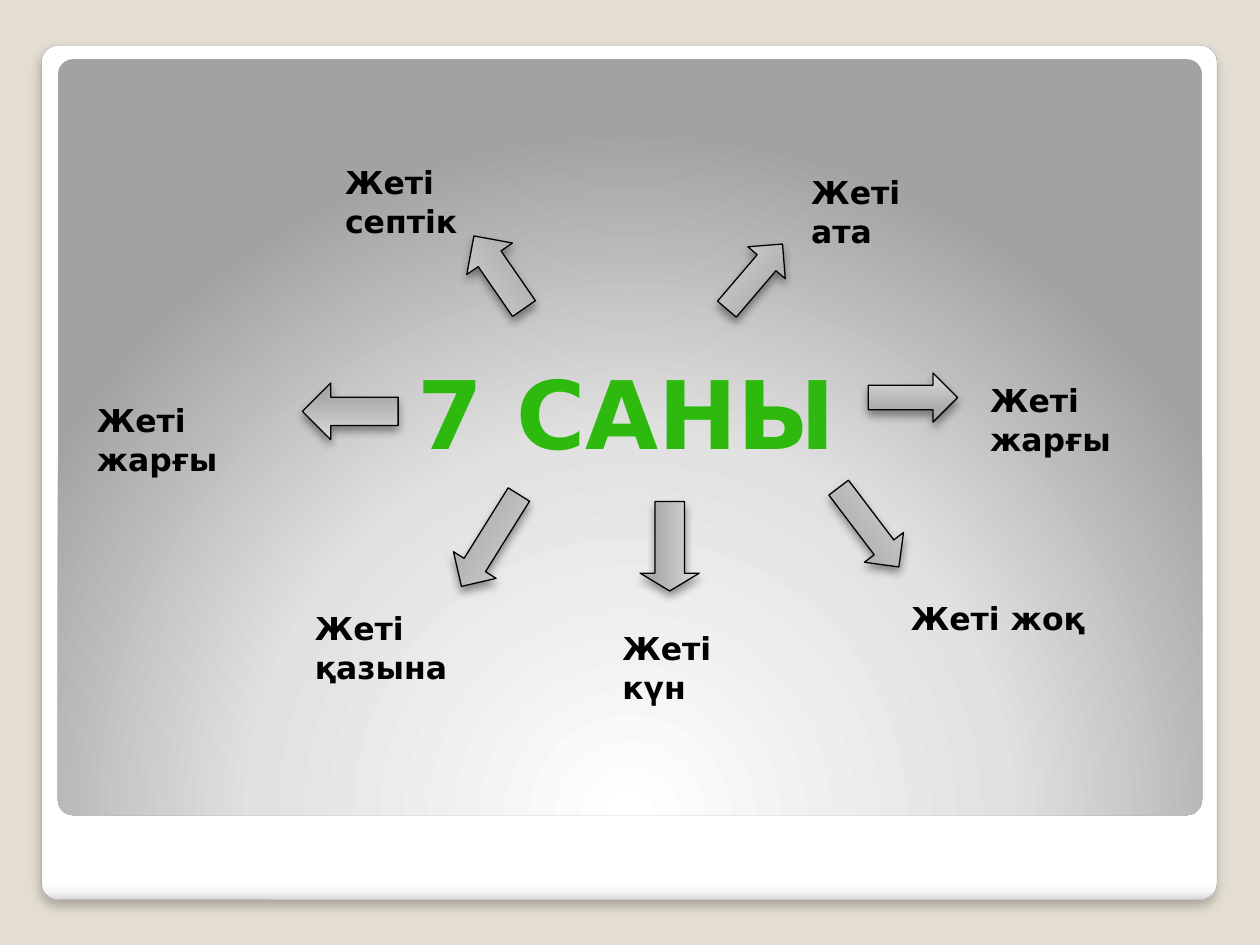
from typing import NamedTuple

from lxml.etree import SubElement
from pptx import Presentation
from pptx.dml.color import RGBColor
from pptx.enum.shapes import MSO_SHAPE
from pptx.enum.text import MSO_ANCHOR, PP_ALIGN
from pptx.oxml import parse_xml
from pptx.oxml.ns import nsdecls, qn
from pptx.util import Inches, Pt

BEIGE = RGBColor(0xE3, 0xDE, 0xD1)
WHITE = RGBColor(0xFF, 0xFF, 0xFF)
MIST = RGBColor(0xF7, 0xF7, 0xF7)
PALE = RGBColor(0xE1, 0xE1, 0xE1)
LIGHT = RGBColor(0xDC, 0xDC, 0xDC)
EDGE = RGBColor(0xDA, 0xDA, 0xDA)
MID = RGBColor(0xAB, 0xAB, 0xAB)
BORDER = RGBColor(0xA4, 0xA4, 0xA4)
GREY = RGBColor(0xA2, 0xA2, 0xA2)
BLACK = RGBColor(0, 0, 0)
GREEN = RGBColor(0x2D, 0xB9, 0x0E)
FONT = "DejaVu Sans"


class Box(NamedTuple):
    x: float
    y: float
    w: float
    h: float


class Arrow(NamedTuple):
    box: Box
    angle: float
    head: float = 0.5


class Label(NamedTuple):
    text: str
    x: float
    y: float
    w: float


class Shadow(NamedTuple):
    alpha: int
    blur: float
    dist: float


FRAME = Box(3.3, 4.8, 93.3, 90.4)
PANEL = Box(4.6, 6.27, 90.8, 80)
TITLE = Box(31.9, 36.4, 35.7, 13.47)
LABEL_H = 5.33

FRAME_STOPS = [(0, WHITE), (98, WHITE), (99, MIST), (100, EDGE)]
PANEL_STOPS = [(0, WHITE), (55, PALE), (100, GREY)]
ARROW_STOPS = [(0, GREY), (25, MID), (100, LIGHT)]
PANEL_PATH = ('<a:path path="circle"><a:fillToRect l="50000" t="175000" '
              'r="50000" b="-75000"/></a:path>')

ARROWS = [
    Arrow(Box(68.9, 39.47, 7.1, 5.2), 0),
    Arrow(Box(24, 40.53, 7.6, 6), 180),
    Arrow(Box(36.1, 25.87, 7, 5.87), 235.4),
    Arrow(Box(56.5, 26.67, 6.8, 5.2), 310.5),
    Arrow(Box(65, 53.2, 7.9, 5.2), 52.8),
    Arrow(Box(34.6, 54.53, 8.6, 5.33), 122),
    Arrow(Box(49.6, 54.67, 7.1, 6.27), 90, 0.3),
]
LABELS = [
    Label("Жеті жарғы", 77.6, 39.47, 19.3),
    Label("Жеті жоқ", 71.3, 62.53, 16.2),
    Label("Жеті күн", 48.4, 65.73, 14.8),
    Label("Жеті қазына", 24, 63.6, 20.3),
    Label("Жеті жарғы", 6.7, 41.6, 19.3),
    Label("Жеті септік", 26.4, 16.4, 18.5),
    Label("Жеті ата", 63.4, 17.47, 14.3),
]

prs = Presentation()
prs.slide_width, prs.slide_height = Inches(10), Inches(7.5)
slide = prs.slides.add_slide(prs.slide_layouts[5])


def place(box: Box) -> tuple[int, int, int, int]:
    w, h = prs.slide_width / 100, prs.slide_height / 100
    return int(box.x * w), int(box.y * h), int(box.w * w), int(box.h * h)


def linear(angle: int) -> str:
    return f'<a:lin ang="{angle * 60000}" scaled="0"/>'


def add_gradient_shape(kind, box: Box, stops, direction: str, line=None,
                       line_width: float = 0.75, shadow: Shadow | None = None):
    sp = slide.shapes.add_shape(kind, *place(box))
    gs = "".join(f'<a:gs pos="{pos * 1000}"><a:srgbClr val="{color}"/></a:gs>'
                 for pos, color in stops)
    props = sp.element.spPr
    props.find(qn("a:prstGeom")).addnext(parse_xml(
        f'<a:gradFill {nsdecls("a")} rotWithShape="1">'
        f'<a:gsLst>{gs}</a:gsLst>{direction}</a:gradFill>'))
    if line is None:
        sp.line.fill.background()
    else:
        sp.line.color.rgb = line
        sp.line.width = Pt(line_width)
    sp.shadow.inherit = False
    if shadow:
        outer = SubElement(props.find(qn("a:effectLst")), qn("a:outerShdw"),
                           blurRad=str(Pt(shadow.blur)), dist=str(Pt(shadow.dist)),
                           dir="5400000", algn="t", rotWithShape="0")
        color = SubElement(outer, qn("a:srgbClr"), val=str(BLACK))
        SubElement(color, qn("a:alpha"), val=str(shadow.alpha * 1000))
    return sp


def write(sp, text: str, *, size: float, color: RGBColor,
          align=PP_ALIGN.LEFT, wrap: bool = True) -> None:
    tf = sp.text_frame
    tf.word_wrap = wrap
    tf.vertical_anchor = MSO_ANCHOR.TOP
    p = tf.paragraphs[0]
    p.alignment = align
    p.line_spacing = 1.04
    r = p.add_run()
    r.text = text
    r.font.name, r.font.size, r.font.bold = FONT, Pt(size), True
    r.font.color.rgb = color


def add_arrow(arrow: Arrow) -> None:
    sp = add_gradient_shape(MSO_SHAPE.RIGHT_ARROW, arrow.box, ARROW_STOPS,
                            linear(270), line=BLACK, shadow=Shadow(40, 5.2, 3))
    sp.adjustments[1] = arrow.head
    sp.rotation = arrow.angle


def add_label(label: Label) -> None:
    sp = slide.shapes.add_textbox(*place(Box(label.x, label.y, label.w, LABEL_H)))
    write(sp, label.text, size=18, color=BLACK)


def main() -> None:
    slide.background.fill.solid()
    slide.background.fill.fore_color.rgb = BEIGE
    frame = add_gradient_shape(MSO_SHAPE.ROUNDED_RECTANGLE, FRAME, FRAME_STOPS,
                               linear(90), line=BORDER, line_width=0.16,
                               shadow=Shadow(25, 6, 4))
    panel = add_gradient_shape(MSO_SHAPE.ROUNDED_RECTANGLE, PANEL, PANEL_STOPS,
                               PANEL_PATH)
    for sp in (frame, panel):
        sp.adjustments[0] = 0.02
    title = slide.shapes.title
    title.left, title.top, title.width, title.height = place(TITLE)
    panel.element.addnext(title.element)
    write(title, "7 САНЫ", size=54, color=GREEN, align=PP_ALIGN.CENTER, wrap=False)
    for arrow in ARROWS:
        add_arrow(arrow)
    for label in LABELS:
        add_label(label)
    prs.save("out.pptx")


if __name__ == "__main__":
    main()
